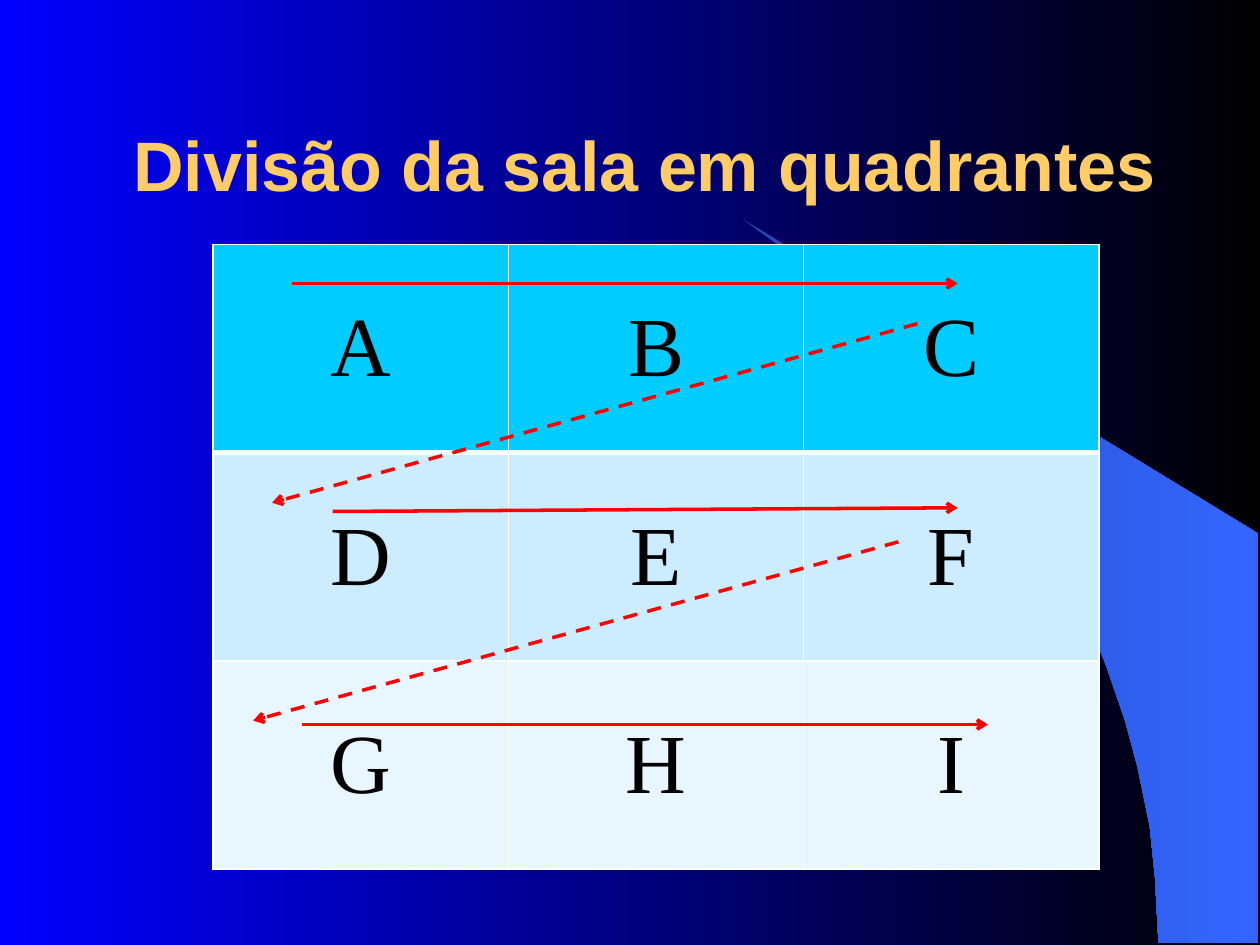
from lxml import etree
from pptx import Presentation
from pptx.dml.color import RGBColor
from pptx.enum.dml import MSO_LINE
from pptx.enum.shapes import MSO_CONNECTOR
from pptx.enum.text import MSO_ANCHOR, PP_ALIGN
from pptx.oxml.ns import qn
from pptx.util import Pt

STRAIGHT, DASH = MSO_CONNECTOR.STRAIGHT, MSO_LINE.DASH
MIDDLE, CENTER = MSO_ANCHOR.MIDDLE, PP_ALIGN.CENTER
C = {"blue": "0000FF", "black": "000000", "title": "FFCC66", "border": "FFFFFF",
     "arrow": "FF0000", "wing_dark": "2449B6", "wing_light": "3366FF",
     "row1": "00CCFF", "row2": "CCECFF", "row3": "E7F6FF"}


def gradient(fill, *names):
    """Fill from left to right with the two named colours."""
    fill.gradient()
    fill.gradient_angle = 0
    for stop, name in zip(fill.gradient_stops, names):
        stop.color.rgb = RGBColor.from_string(C[name])


def add_run(p, text, font, size, color, bold):
    p.alignment = CENTER
    r = p.add_run()
    r.text = text
    r.font.name, r.font.size, r.font.bold = font, Pt(size), bold
    r.font.color.rgb = RGBColor.from_string(C[color])


prs = Presentation()
prs.slide_width, prs.slide_height = Pt(720), Pt(540)
s = prs.slides.add_slide(prs.slide_layouts[6])
gradient(s.background.fill, "blue", "black")

# Curved wing behind the table
wing = [(662.4, 538.6), (719.3, 539.3), (719.3, 304.6), (424.1, 124.6), (449.3, 143.3),
        (470.2, 159.8), (493.2, 180), (515.5, 201.6), (548.6, 237.6), (578.2, 276.5),
        (599, 310.3), (617.8, 344.9), (632.2, 380.2), (643, 411.8), (650.2, 438.5),
        (657.4, 472.3), (660.2, 501.1)]
fb = s.shapes.build_freeform(*wing[0], scale=Pt(1))
fb.add_line_segments(wing[1:], close=True)
sp = fb.convert_to_shape()
sp.shadow.inherit = False
sp.line.fill.background()
gradient(sp.fill, "wing_dark", "wing_light")

# Title
tf = s.shapes.add_textbox(Pt(16.6), Pt(48.2), Pt(703.4), Pt(90)).text_frame
tf.word_wrap = True
tf.vertical_anchor = MIDDLE
add_run(tf.paragraphs[0], "Divisão da sala em quadrantes", "Arial", 40, "title", True)

# Room quadrants
rows = ["ABC", "DEF", "GHI"]
tbl = s.shapes.add_table(3, 3, Pt(121.7), Pt(139.7), Pt(506.4), Pt(357)).table
for col in tbl.columns:
    col.width = Pt(168.8)
for i, letters in enumerate(rows):
    tbl.rows[i].height = Pt(119)
    for j, letter in enumerate(letters):
        cell = tbl.cell(i, j)
        cell.fill.solid()
        cell.fill.fore_color.rgb = RGBColor.from_string(C[f"row{i + 1}"])
        cell.vertical_anchor = MIDDLE
        add_run(cell.text_frame.paragraphs[0], letter, "Times New Roman", 48, "black", False)
        widths = {"lnL": 1, "lnR": 1, "lnT": 3 if i == 1 else 1, "lnB": 3 if i == 0 else 1}
        tcPr = cell._tc.get_or_add_tcPr()
        for k, (side, width) in enumerate(widths.items()):
            ln = etree.Element(qn(f"a:{side}"), w=str(Pt(width)))
            solid = etree.SubElement(ln, qn("a:solidFill"))
            etree.SubElement(solid, qn("a:srgbClr"), val=C["border"])
            tcPr.insert(k, ln)

# Reading path: solid along each row, dashed back to the next one
path_arrows = [(167, 162, 547.2, 162), (524.2, 185, 155.5, 287.3),
               (190.1, 292.3, 547.2, 290.2), (513.4, 309.6, 144.7, 411.8),
               (172.8, 414, 564.5, 414)]
for i, ends in enumerate(path_arrows):
    cx = s.shapes.add_connector(STRAIGHT, *map(Pt, ends))
    cx.line.color.rgb = RGBColor.from_string(C["arrow"])
    cx.line.width = Pt(2)
    if i % 2:
        cx.line.dash_style = DASH
    etree.SubElement(cx.line._get_or_add_ln(), qn("a:tailEnd"), type="arrow")
    etree.SubElement(cx._element.spPr, qn("a:effectLst"))

prs.save("out.pptx")
